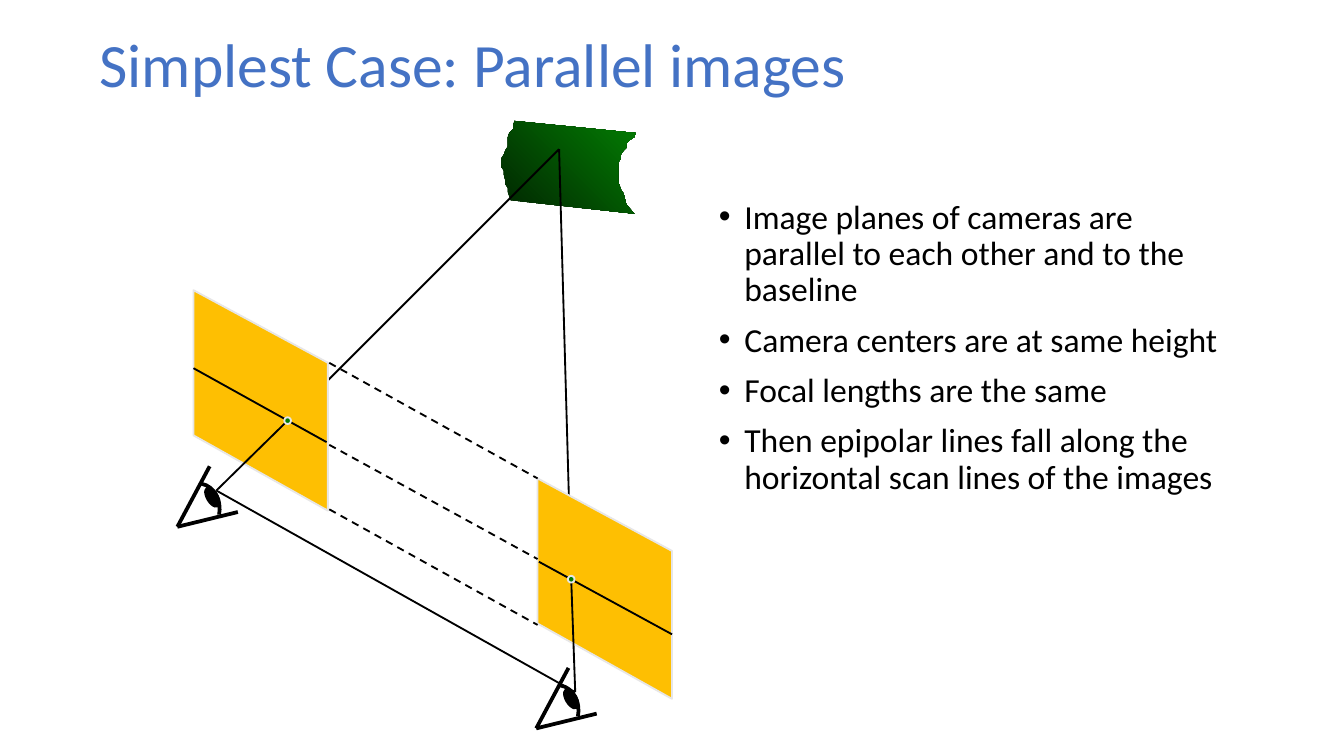
from lxml import etree
from pptx import Presentation
from pptx.dml.color import RGBColor
from pptx.enum.dml import MSO_LINE
from pptx.enum.shapes import MSO_CONNECTOR, MSO_SHAPE
from pptx.enum.text import MSO_ANCHOR, MSO_AUTO_SIZE, PP_ALIGN
from pptx.oxml.ns import qn
from pptx.util import Inches, Pt

STRAIGHT = MSO_CONNECTOR.STRAIGHT
OVAL = MSO_SHAPE.OVAL
DASH = MSO_LINE.DASH
MIDDLE = MSO_ANCHOR.MIDDLE
LEFT = PP_ALIGN.LEFT
FIXED = MSO_AUTO_SIZE.NONE
BLACK, GREY, GOLD, GREEN, BLUE = "000000", "E7E6E6", "FEBF02", "037C03", "4472C4"
color = RGBColor.from_string

deck = Presentation()
deck.slide_width = Inches(10)
deck.slide_height = Inches(10) * 9 // 16
slide = deck.slides.add_slide(deck.slide_layouts[5])
shapes = slide.shapes


def line(start, end, width=1, dash=None):
    link = shapes.add_connector(STRAIGHT, *map(Inches, (*start, *end)))
    link.line.color.rgb = color(BLACK)
    link.line.width = Pt(width)
    link.line.dash_style = dash
    etree.SubElement(link._element.spPr, qn("a:effectLst"))


def outline(points, edge=None, width=1, closed=True):
    """Draw a freeform without fill through points given in inches."""
    points = [(Inches(x), Inches(y)) for x, y in points]
    pen = shapes.build_freeform(*points[0])
    pen.add_line_segments(points[1:], close=closed)
    form = pen.convert_to_shape()
    form.shadow.inherit = False
    form.fill.background()
    if edge:
        form.line.color.rgb = color(edge)
        form.line.width = Pt(width)
    else:
        form.line.fill.background()
    return form


# Title
title = shapes.title
title.left, title.top, title.width, title.height = map(Inches, (0.64, -0.04, 8.62, 1.09))
frame = title.text_frame
frame.text = "Simplest Case: Parallel images"
frame.auto_size = FIXED
frame.vertical_anchor = MIDDLE
head = frame.paragraphs[0]
head.alignment = LEFT
head.line_spacing = 0.9
head.font.name = "Calibri"
head.font.size = Pt(33)
head.font.color.rgb = color(BLUE)

# Bullets
frame = shapes.add_textbox(*map(Inches, (5.25, 1.44, 4.01, 3.3))).text_frame
frame.word_wrap = True
items = [
    "Image planes of cameras are parallel to each other and to the baseline",
    "Camera centers are at same height",
    "Focal lengths are the same",
    "Then epipolar lines fall along the horizontal scan lines of the images",
]
for i, item in enumerate(items):
    para = frame.add_paragraph() if i else frame.paragraphs[0]
    para.text = item
    para.line_spacing = 0.9
    para.space_before = Pt(7.5)
    para.font.name = "Calibri"
    para.font.size = Pt(18)
    para.font.color.rgb = color(BLACK)
    props = para._p.get_or_add_pPr()
    props.set("marL", str(Inches(0.19)))
    props.set("indent", str(-Inches(0.19)))
    mark = etree.Element(qn("a:buFont"), typeface="Arial")
    bullet = etree.Element(qn("a:buChar"), char="•")
    props.find(qn("a:defRPr")).addprevious(mark)
    mark.addnext(bullet)

# Surface seen by both cameras
surface = outline([
    (3.83, 0.9), (3.82, 0.93), (3.82, 0.96), (3.79, 0.99), (3.78, 1.02),
    (3.78, 1.09), (3.76, 1.12), (3.75, 1.15), (3.73, 1.18), (3.73, 1.24),
    (3.75, 1.27), (3.75, 1.3), (3.76, 1.34), (3.76, 1.37), (3.78, 1.4),
    (3.78, 1.43), (3.8, 1.49), (4.72, 1.59), (4.66, 1.52), (4.64, 1.44),
    (4.62, 1.41), (4.6, 1.35), (4.6, 1.21), (4.62, 1.18), (4.62, 1.15),
    (4.64, 1.12), (4.66, 1.1), (4.66, 1.07), (4.69, 1.04), (4.72, 1.02),
    (4.73, 0.99),
])
surface.fill.gradient()
surface.fill.gradient_angle = 45
for stop, tone in zip(surface.fill.gradient_stops, ("012501", GREEN)):
    stop.color.rgb = color(tone)

# Baseline and rays behind the image planes
eyes = [(1.61, 3.65), (4.28, 5.15)]
spots = [(2.14, 3.13), (4.25, 4.31)]
target = (4.16, 1.11)
line(*eyes)
for spot in spots:
    line(spot, target)

# Image planes, with the rays in front of them
for x, y in [(1.44, 2.16), (4, 3.56)]:
    plane = outline([(x, y), (x + 1, y + 0.54), (x + 1, y + 1.64), (x, y + 1.08)], GREY)
    plane.fill.solid()
    plane.fill.fore_color.rgb = color(GOLD)
for eye, spot in zip(eyes, spots):
    line(eye, spot)

# Epipolar lines
line((1.44, 2.74), (2.43, 3.29))
line((4.01, 4.18), (5, 4.72))
for top, base in [(2.7, 3.56), (3.31, 4.16), (3.79, 4.65)]:
    line((2.45, top), (4, base), dash=DASH)

# Eyes: two lids and a cornea, a cubic curve in eight steps
curve = [(-0.11, -0.05), (-0.01, -0.03), (0.04, 0.08), (0.02, 0.18)]
for x, y in eyes:
    corner = (x - 0.29, y + 0.27)
    line((x - 0.05, y - 0.18), corner, 2)
    line(corner, (x + 0.16, y + 0.16), 2)
    arc = []
    for step in range(9):
        t = step / 8
        parts = ((1 - t) ** 3, 3 * t * (1 - t) ** 2, 3 * t * t * (1 - t), t ** 3)
        arc.append((x + sum(p * c[0] for p, c in zip(parts, curve)),
                    y + sum(p * c[1] for p, c in zip(parts, curve))))
    outline(arc, BLACK, 2, closed=False)

# Pupils and image points, placed by their centres
dots = [(x - 0.03, y + 0.05, 0.08, 0.16, 329, BLACK, BLACK) for x, y in eyes]
dots += [(x, y, 0.05, 0.05, 0, GREEN, GREY) for x, y in spots]
for x, y, wide, high, turn, fill, edge in dots:
    dot = shapes.add_shape(OVAL, *map(Inches, (x - wide / 2, y - high / 2, wide, high)))
    dot.rotation = turn
    dot.shadow.inherit = False
    dot.fill.solid()
    dot.fill.fore_color.rgb = color(fill)
    dot.line.color.rgb = color(edge)
    dot.line.width = Pt(1)

deck.save("out.pptx")
